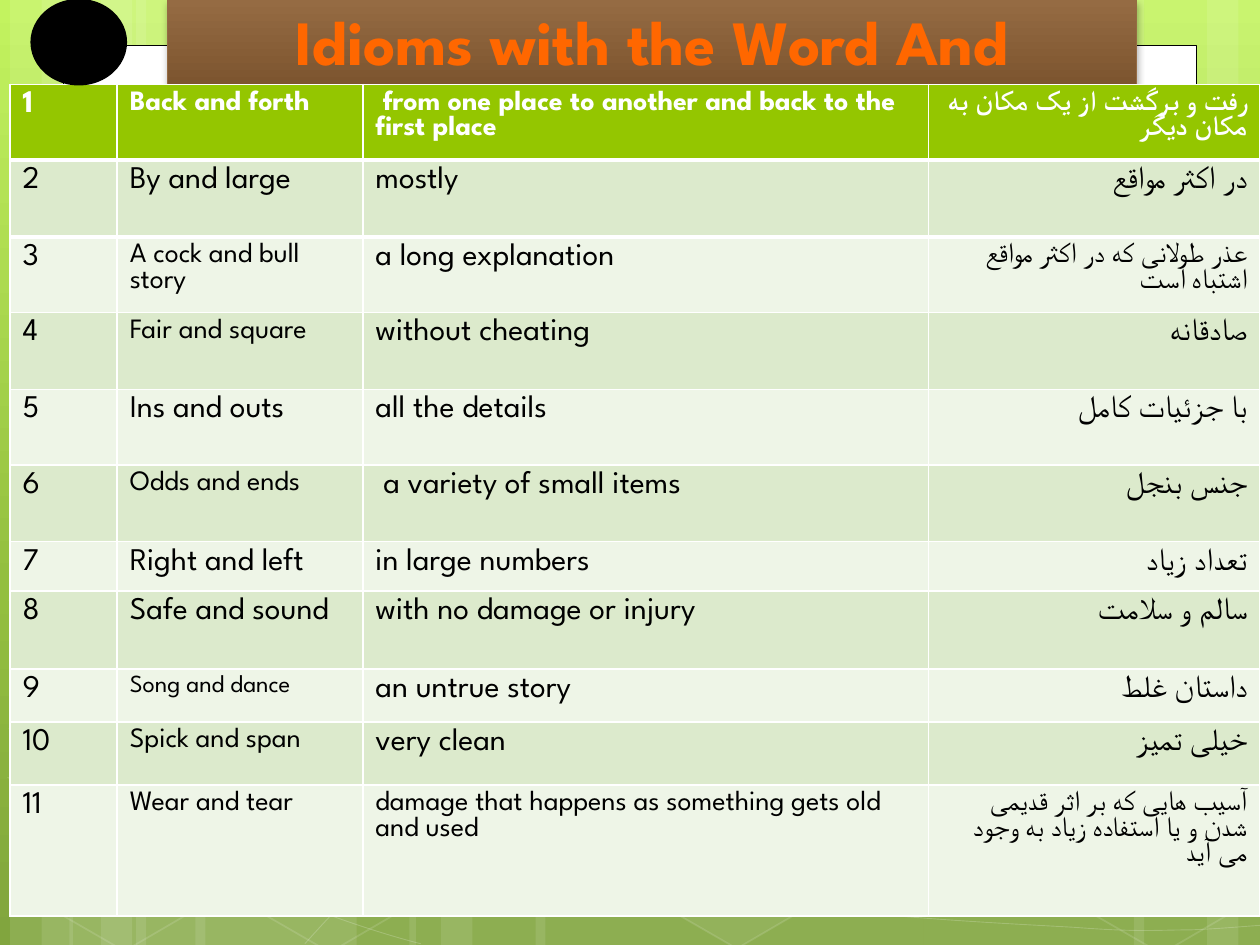
from copy import deepcopy
from math import cos, pi, sin
from lxml import etree
from pptx import Presentation
from pptx import util as u
from pptx.dml.color import RGBColor
from pptx.enum import shapes, text
from pptx.oxml.ns import qn

hues = {"white": "FFFFFF", "black": "000000", "smoke": "F5F5F5", "leaf": "74A510",
        "taupe": "71685A", "wood": "956B43", "bark": "7D552F", "orange": "FF6700",
        "head": "94C600", "odd": "DCEACC", "even": "EEF5E7",
        "lime": "C3F35F", "moss": "93BF3F", "fern": "81A53E"}
hues = {name: RGBColor.from_string(code) for name, code in hues.items()}
face = "League Spartan"

deck = Presentation()
deck.slide_width, deck.slide_height = u.Inches(10), u.Inches(7.5)
unit = deck.slide_width / 10
page = deck.slides.add_slide(deck.slide_layouts[5])
tree = page.shapes
title = tree.title


def dress(shape, fill=None, clear=100, line=None, width=1, faint=100):
    shape.shadow.inherit = False
    for paint, hue, part, share in ((shape.fill, fill, "a:solidFill", clear),
                                    (shape.line.fill, line, "a:ln/a:solidFill", faint)):
        if not hue:
            paint.background()
            continue
        paint.solid()
        paint.fore_color.rgb = hues[hue]
        if share < 100:
            route = "/".join(qn(step) for step in part.split("/"))
            tint = shape._element.spPr.find(route)[0]
            etree.SubElement(tint, qn("a:alpha"), val=str(share * 1000))
    if line:
        shape.line.width = u.Pt(width)


def shade(root, paint, stops):
    paint.gradient()
    paint.gradient_angle = 270
    ramp = root.find(".//" + qn("a:gsLst"))
    while len(ramp) < len(stops):
        ramp.append(deepcopy(ramp[-1]))
    for stop, (spot, hue) in zip(paint.gradient_stops, stops):
        stop.position = spot
        stop.color.rgb = hues[hue]


shade(page._element, page.background.fill, [(0, "lime"), (0.62, "moss"), (1, "fern")])

bands = [(1.08, 1.75), (0.08, 0.5), (0.33, 0.83), (1.55, 1.75), (0.55, 0.5), (0.8, 0.83),
         (7.33, 1.75), (9.58, 0.5), (9, 0.83), (4.25, 3.08), (3.25, 0.5), (3.5, 0.83)]
for left, wide in bands:
    band = tree.add_shape(shapes.MSO_SHAPE.RECTANGLE, int(left * unit), 0,
                          int(wide * unit), deck.slide_height)
    dress(band, "white", 10)

curves = [
    [(0.07, 6.73), (0.61, 6.76), (1.15, 6.79), (1.9, 6.78), (2.65, 6.77), (3.58, 6.75),
     (4.58, 6.65), (5.58, 6.55), (7, 6.36), (7.92, 6.17), (8.83, 5.98), (9.77, 5.68),
     (10.07, 5.51)],
    [(0.07, 4.77), (0.36, 4.61), (0.65, 4.46), (1.21, 4.31), (1.78, 4.16), (2.59, 3.94),
     (3.47, 3.87), (4.36, 3.8), (5.44, 3.79), (6.54, 3.87), (7.64, 3.95), (9.47, 4.26),
     (10.07, 4.34)],
    [(0.06, 6.17), (1.27, 6.72), (2.47, 7.27), (3.34, 7.49)],
    [(0.07, 5.78), (0.38, 5.89), (0.7, 6), (1.28, 6.16), (1.86, 6.31), (2.73, 6.56),
     (3.57, 6.73), (4.4, 6.9), (5.45, 7.08), (6.28, 7.18), (7.11, 7.29), (8, 7.33),
     (8.53, 7.36), (9.05, 7.4), (9.19, 7.38), (9.45, 7.38), (9.71, 7.37), (9.89, 7.35),
     (10.07, 7.34)],
    [(2.42, 7.49), (2.6, 7.29), (2.78, 7.09), (3.02, 6.91), (3.26, 6.73), (3.6, 6.53),
     (3.88, 6.39), (4.16, 6.25), (4.33, 6.19), (4.7, 6.09), (5.06, 5.99), (5.73, 5.85),
     (6.08, 5.78), (6.44, 5.71), (6.49, 5.71), (6.8, 5.69), (7.11, 5.66), (7.6, 5.63),
     (7.94, 5.62), (8.29, 5.61), (8.86, 5.62), (8.86, 5.62), (8.86, 5.62), (9.53, 5.62),
     (9.53, 5.62), (9.71, 5.63), (9.88, 5.64), (9.97, 5.65), (10.06, 5.66), (10.03, 5.65),
     (10.06, 5.66)],
]
for knots in curves:
    dots = [(x * unit, y * unit) for x, y in knots]
    pen = tree.build_freeform(*dots[0])
    pen.add_line_segments(dots[1:], close=False)
    curve = pen.convert_to_shape()
    legs = list(curve._element.iter(qn("a:lnTo")))
    track = legs[0].getparent()
    for k in range(0, len(legs), 3):
        bend = etree.SubElement(track, qn("a:cubicBezTo"))
        for leg in legs[k:k + 3]:
            bend.append(leg[0])
            track.remove(leg)
    dress(curve, line="white", width=0.5, faint=20)

cells = [(3.34, 0.36, 4, 8), (4.97, 5.89, 6, 12), (0.11, 5.91, 0, 12), (0.14, 3.12, 7, 8),
         (1.74, 5.92, 0, 12), (7.53, 4.53, 10, 12), (8.34, 5.93, 0, 12), (8.34, 3.14, 7, 8)]
for left, top, clear, faint in cells:
    comb = tree.add_shape(shapes.MSO_SHAPE.HEXAGON, int(left * unit), int(top * unit),
                          int(1.75 * unit), int(1.52 * unit))
    comb.adjustments[0] = 0.285
    comb.rotation = 30
    dress(comb, "white" if clear else None, clear, "white", 1, faint)

right = [(-0.59, -0.35), (0.16, -0.79), (0.24, -0.74), (0.24, 0.93), (0.17, 0.97), (-0.59, 0.53)]
left = [(-0.28, -0.9), (-0.17, -0.97), (0.6, -0.53), (0.59, 0.35), (-0.16, 0.79), (-0.28, 0.72)]
co, si = cos(pi / 6), sin(pi / 6)
for knots, mid, top, clear in ((left, 0.36, 5.35, 10), (right, 9.85, 5.2, 4),
                               (right, 9.85, 2.42, 0)):
    dots = [((mid + x * co + y * si) * unit, (top - x * si + y * co) * unit) for x, y in knots]
    pen = tree.build_freeform(*dots[0])
    pen.add_line_segments(dots[1:])
    comb = pen.convert_to_shape()
    comb.rotation = 30
    dress(comb, "white" if clear else None, clear, "white", 1, 12)

panels = [((0.5, 0.36, 9, 6.76), "white", "black", 0.5),
          ((4.99, -0.02, 4.02, 0.76), "smoke", "leaf", 1.25),
          ((5.08, -0.02, 3.83, 0.68), "taupe", None, 0)]
for box, fill, line, width in panels:
    panel = tree.add_shape(shapes.MSO_SHAPE.RECTANGLE, *(int(n * unit) for n in box))
    dress(panel, fill, 100, line, width)

place = {"left": 1.33, "top": 0, "width": 7.69, "height": 0.67}
for name, size in place.items():
    setattr(title, name, int(size * unit))
tree._spTree.append(title._element)
dress(title, line="wood", width=0.75)
shade(title._element, title.fill, [(0, "wood"), (1, "bark")])
glow = title._element.spPr.find(qn("a:effectLst"))
cast = etree.SubElement(glow, qn("a:outerShdw"), blurRad=str(u.Pt(4)), dist=str(u.Pt(2)),
                        dir="5400000", rotWithShape="0")
dark = etree.SubElement(cast, qn("a:srgbClr"), val=str(hues["black"]))
etree.SubElement(dark, qn("a:alpha"), val="28000")
title.text_frame.text = "Idioms with the Word And"
title.text_frame.vertical_anchor = text.MSO_ANCHOR.BOTTOM
line = title.text_frame.paragraphs[0]
line.alignment = text.PP_ALIGN.CENTER
for name, value in {"name": face, "size": u.Pt(36), "bold": True}.items():
    setattr(line.font, name, value)
line.font.color.rgb = hues["orange"]

rows = [
    (0.6, (16, 16, 16), "Back and forth", " from one place to another and back to the first place",
     "رفت و برگشت از یک مکان به مکان دیگر"),
    (0.61, (18, 18, 18), "By and large", "mostly", "در اکثر مواقع"),
    (0.6, (16, 18, 16), "A cock and bull story", "a long explanation",
     "عذر طولانی که در اکثر مواقع اشتباه است"),
    (0.61, (16, 18, 18), "Fair and square", "without cheating", "صادقانه"),
    (0.6, (18, 18, 18), "Ins and outs", "all the details", "با جزئیات کامل"),
    (0.61, (16, 18, 18), "Odds and ends", " a variety of small items", "جنس بنجل"),
    (0.39, (18, 18, 18), "Right and left", "in large numbers", "تعداد زیاد"),
    (0.62, (18, 18, 18), "Safe and sound", "with no damage or injury", "سالم و سلامت"),
    (0.42, (14, 18, 18), "Song and dance", "an untrue story", "داستان غلط"),
    (0.5, (16, 18, 18), "Spick and span", "very clean", "خیلی تمیز"),
    (1.04, (16, 16, 16), "Wear and tear", "damage that happens as something gets old and used",
     "آسیب هایی که بر اثر قدیمی شدن و یا استفاده زیاد به وجود می آید"),
]
cols = [0.85, 1.95, 4.49, 2.63]
grid = tree.add_table(len(rows), len(cols), int(0.08 * unit), int(0.67 * unit),
                      int(sum(cols) * unit), int(sum(row[0] for row in rows) * unit)).table
for col, wide in zip(grid.columns, cols):
    col.width = int(wide * unit)
for r, (tall, sizes, *words) in enumerate(rows):
    grid.rows[r].height = int(tall * unit)
    for c, (word, size) in enumerate(zip([str(r + 1)] + words, (18,) + sizes)):
        cell = grid.cell(r, c)
        cell.fill.solid()
        cell.fill.fore_color.rgb = hues["head" if r == 0 else "odd" if r % 2 else "even"]
        if r < 2:
            edge = etree.Element(qn("a:lnT" if r else "a:lnB"), w=str(u.Pt(3)))
            wash = etree.SubElement(edge, qn("a:solidFill"))
            etree.SubElement(wash, qn("a:srgbClr"), val=str(hues["white"]))
            cell._tc.tcPr.insert(0, edge)
        cell.text = word
        line = cell.text_frame.paragraphs[0]
        font = line.runs[0].font
        for name, value in {"name": face, "size": u.Pt(size), "bold": r == 0}.items():
            setattr(font, name, value)
        font.color.rgb = hues["black" if r else "white"]
        if c == 3:
            line.alignment = text.PP_ALIGN.RIGHT
            line._p.get_or_add_pPr().set("rtl", "1")
            etree.SubElement(line.runs[0]._r.rPr, qn("a:cs"), typeface=face)

disc = tree.add_shape(shapes.MSO_SHAPE.OVAL, int(0.25 * unit), 0, int(0.75 * unit), int(0.67 * unit))
dress(disc, "black", 100, "black", 1.25)

deck.save("out.pptx")
